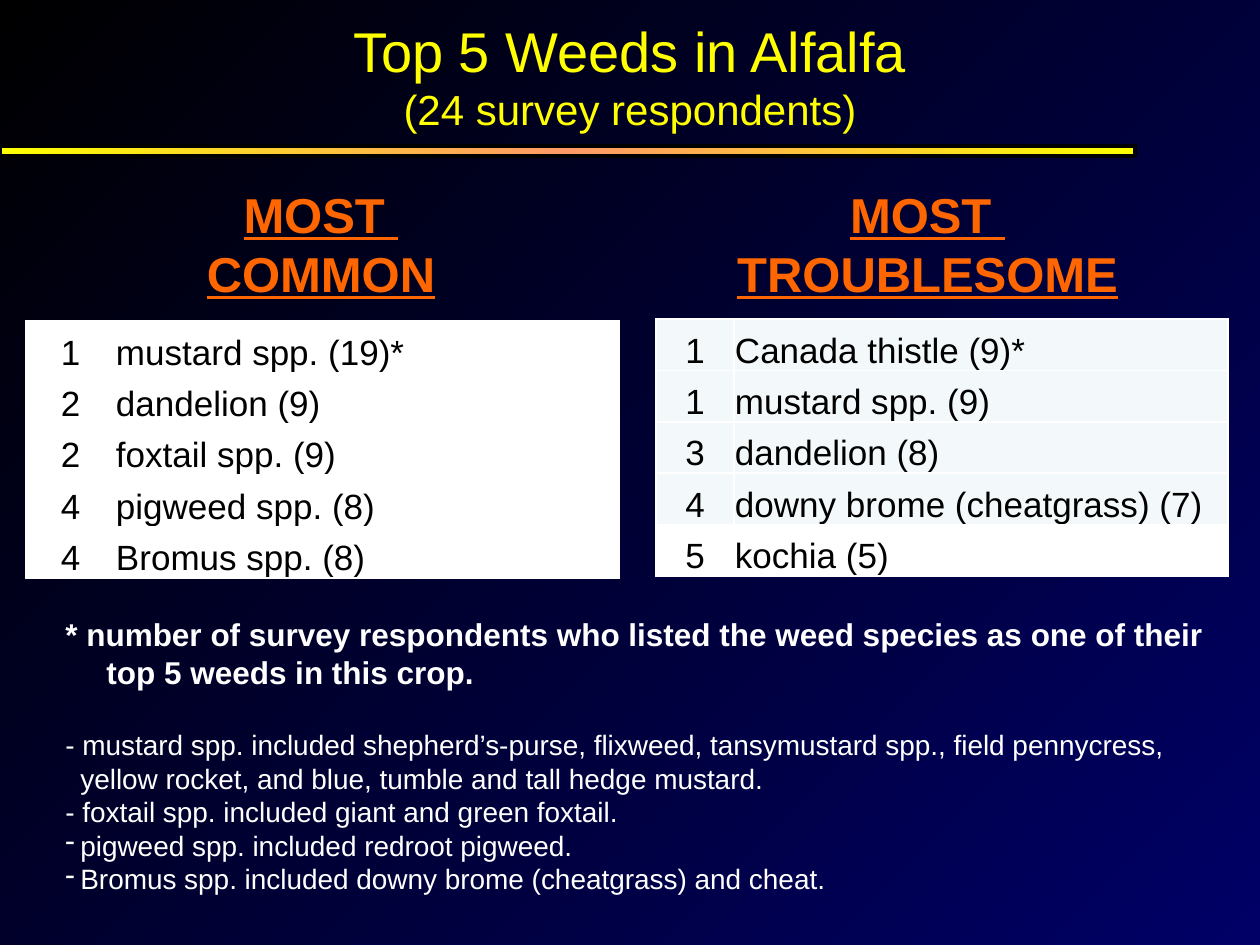
from lxml import etree
from pptx import Presentation
from pptx import util as u
from pptx.dml.color import RGBColor
from pptx.enum import shapes, text
from pptx.oxml.ns import qn

PX = 914400 / 126
COLORS = {
    "black": "000000", "navy": "000066", "yellow": "FFFF00", "peach": "FF9966",
    "orange": "FF6600", "white": "FFFFFF", "mist": "F3F9FA",
}


def px(n):
    return u.Emu(round(n * PX))


def rgb(name):
    return RGBColor.from_string(COLORS[name])


def write(paragraph, words, size, color, bold=False, underline=False,
          align=text.PP_ALIGN.LEFT, hang=0, bullet=None, after=0):
    """Fill one paragraph with formatted text."""
    run = paragraph.add_run()
    run.text = words
    font = run.font
    font.name, font.size = "Arial", u.Pt(size)
    font.bold, font.underline = bold, underline
    font.color.rgb = rgb(color)
    paragraph.alignment = align
    paragraph.space_before, paragraph.space_after = u.Pt(0), u.Pt(after)
    if hang:
        props = paragraph._p.get_or_add_pPr()
        props.set("marL", str(px(hang)))
        props.set("indent", str(-px(hang)))
        if bullet:
            etree.SubElement(props, qn("a:buChar")).set("char", bullet)


class WeedSlide:
    def __init__(self, prs):
        self.slide = prs.slides.add_slide(prs.slide_layouts[5])

    def gradient(self, fill, owner, angle, stops):
        fill.gradient()
        fill.gradient_angle = angle
        stop_list = next(owner.iter(qn("a:gsLst")))
        for old in list(stop_list):
            stop_list.remove(old)
        for position, color in stops:
            stop = etree.SubElement(stop_list, qn("a:gs"), pos=str(position * 1000))
            etree.SubElement(stop, qn("a:srgbClr"), val=COLORS[color])

    def background(self, *stops):
        self.gradient(self.slide.background.fill, self.slide.element, 315, stops)

    def paragraphs(self, frame, lines, **style):
        frame.word_wrap = True
        for i, (words, own) in enumerate(lines):
            paragraph = frame.add_paragraph() if i else frame.paragraphs[0]
            write(paragraph, words, **{**style, **own})

    def title(self, box, lines, **style):
        title = self.slide.shapes.title
        title.left, title.top, title.width, title.height = map(px, box)
        title.text_frame.vertical_anchor = text.MSO_ANCHOR.MIDDLE
        self.paragraphs(title.text_frame, lines, **style)

    def textbox(self, box, lines, **style):
        shape = self.slide.shapes.add_textbox(*map(px, box))
        self.paragraphs(shape.text_frame, lines, **style)

    def bar(self, box, *stops):
        bar = self.slide.shapes.add_shape(shapes.MSO_SHAPE.RECTANGLE, *map(px, box))
        bar.shadow.inherit = False
        self.gradient(bar.fill, bar._element, 0, stops)
        bar.line.color.rgb = rgb("black")
        bar.line.width = u.Pt(2.25)

    def cell(self, cell, words, fill, align):
        cell.margin_left = cell.margin_right = cell.margin_top = px(1)
        cell.margin_bottom = 0
        cell.vertical_anchor = text.MSO_ANCHOR.BOTTOM
        props = cell._tc.get_or_add_tcPr()
        for side in ("lnL", "lnR", "lnT", "lnB"):
            line = etree.SubElement(props, qn(f"a:{side}"), w=str(u.Pt(1)))
            solid = etree.SubElement(line, qn("a:solidFill"))
            etree.SubElement(solid, qn("a:srgbClr"), val=COLORS["white"])
        cell.fill.solid()
        cell.fill.fore_color.rgb = rgb(fill)
        write(cell.text_frame.paragraphs[0], words, 20, "black", align=align)

    def ranking(self, left, top, widths, rows, fills):
        table = self.slide.shapes.add_table(
            len(rows), 2, px(left), px(top), px(sum(widths)), px(257)).table
        table.first_row = table.horz_banding = False
        for column, width in zip(table.columns, widths):
            column.width = px(width)
        aligns = (text.PP_ALIGN.CENTER, text.PP_ALIGN.LEFT)
        for r, (row, fill) in enumerate(zip(rows, fills)):
            for c, (words, align) in enumerate(zip(row, aligns)):
                self.cell(table.cell(r, c), words, fill, align)


def main():
    prs = Presentation()
    prs.slide_width, prs.slide_height = px(1260), px(945)
    page = WeedSlide(prs)
    center = text.PP_ALIGN.CENTER

    # Background, title and rule
    page.background((0, "black"), (100, "navy"))
    page.title((42, 0, 1176, 151),
               [("Top 5 Weeds in Alfalfa", {}),
                ("(24 survey respondents)", {"size": 24})],
               size=32, color="yellow", align=center)
    page.bar((0, 146, 1135, 10), (0, "yellow"), (50, "peach"), (100, "yellow"))

    # Column headings
    for left, width, heading in ((170, 302, "COMMON"), (722, 411, "TROUBLESOME")):
        page.textbox((left, 178, width, 131), [("MOST ", {}), (heading, {})],
                     size=28, color="orange", bold=True, underline=True, align=center)

    # Rankings
    common = [("1", "mustard spp. (19)*"), ("2", "dandelion (9)"),
              ("2", "foxtail spp. (9)"), ("4", "pigweed spp. (8)"),
              ("4", "Bromus spp. (8)")]
    troublesome = [("1", "Canada thistle (9)*"), ("1", "mustard spp. (9)"),
                   ("3", "dandelion (8)"), ("4", "downy brome (cheatgrass) (7)"),
                   ("5", "kochia (5)")]
    page.ranking(26, 321, (89, 504), common, ["white"] * 5)
    page.ranking(656, 319, (78, 494), troublesome, ["mist"] * 4 + ["white"])

    # Footnotes
    page.textbox((53, 609, 1166, 297), [
        ("* number of survey respondents who listed the weed species as one of "
         "their top 5 weeds in this crop.",
         {"size": 18, "bold": True, "hang": 41, "after": 21}),
        ("- mustard spp. included shepherd’s-purse, flixweed, tansymustard spp., "
         "field pennycress, yellow rocket, and blue, tumble and tall hedge mustard.", {}),
        ("- foxtail spp. included giant and green foxtail.", {}),
        ("pigweed spp. included redroot pigweed.", {"bullet": "-"}),
        ("Bromus spp. included downy brome (cheatgrass) and cheat.", {"bullet": "-"}),
    ], size=16, color="white", hang=15)

    prs.save("out.pptx")


if __name__ == "__main__":
    main()
